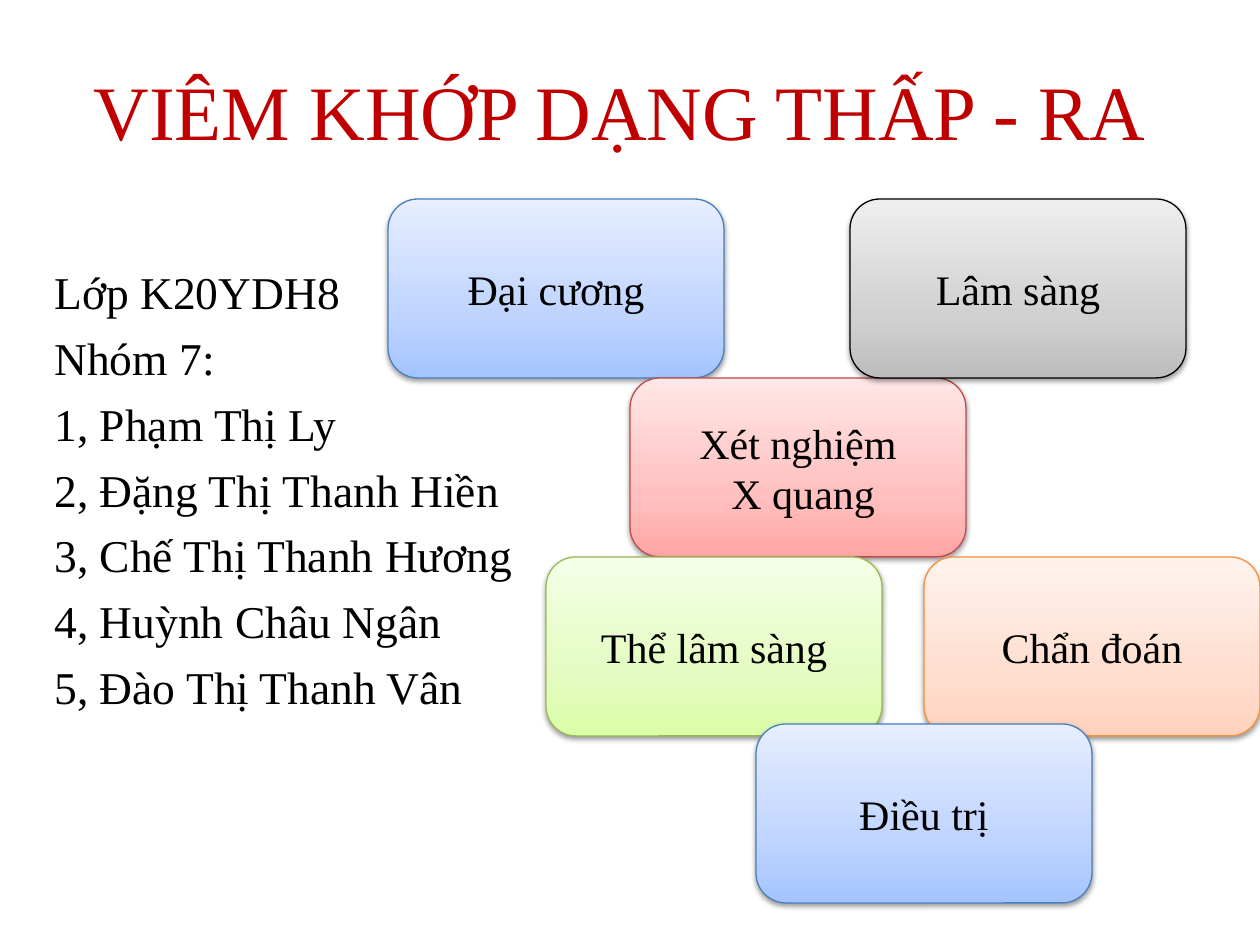
import pptx
import pptx.util
import pptx.dml.color
import pptx.enum.shapes
import pptx.enum.text
import pptx.oxml
import pptx.oxml.ns
import copy

RGBColor = pptx.dml.color.RGBColor
FONT = "Times New Roman"
BLACK = RGBColor(0x00, 0x00, 0x00)
TITLE_RED = RGBColor(0xC0, 0x00, 0x00)
STOP_POSITIONS = (0, 0.35, 1)

# Line colour, then the gradient from bottom to top
BLUE = (RGBColor(0x4B, 0x7E, 0xBC), RGBColor(0xA4, 0xC4, 0xFF),
        RGBColor(0xBF, 0xD4, 0xFF), RGBColor(0xE6, 0xEE, 0xFF))
RED = (RGBColor(0xBF, 0x4C, 0x48), RGBColor(0xFF, 0xA6, 0xA5),
       RGBColor(0xFF, 0xC0, 0xBF), RGBColor(0xFF, 0xE7, 0xE7))
ORANGE = (RGBColor(0xF6, 0x92, 0x40), RGBColor(0xFF, 0xD2, 0xBD),
          RGBColor(0xFF, 0xDE, 0xD0), RGBColor(0xFF, 0xF2, 0xED))
GREEN = (RGBColor(0x98, 0xB9, 0x55), RGBColor(0xDA, 0xFD, 0xA7),
         RGBColor(0xE4, 0xFC, 0xC2), RGBColor(0xF5, 0xFF, 0xE7))
GREY = (BLACK, RGBColor(0xBD, 0xBD, 0xBD),
        RGBColor(0xD1, 0xD1, 0xD1), RGBColor(0xEE, 0xEE, 0xEE))

CARD_WIDTH, CARD_HEIGHT = 336, 179
CARDS = [
    (388, 199, "Đại cương", BLUE),
    (630, 378, "Xét nghiệm\n X quang", RED),
    (924, 557, "Chẩn đoán", ORANGE),
    (546, 557, "Thể lâm sàng", GREEN),
    (850, 199, "Lâm sàng", GREY),
    (756, 724, "Điều trị", BLUE),
]
MEMBERS = [
    "Lớp K20YDH8",
    "Nhóm 7:",
    "1, Phạm Thị Ly",
    "2, Đặng Thị Thanh Hiền",
    "3, Chế Thị Thanh Hương",
    "4, Huỳnh Châu Ngân",
    "5, Đào Thị Thanh Vân",
]


def px(length):
    return round(length * pptx.util.Inches(1) / 126)


def write_text(box, text, size, color, align, anchor, gap=0):
    frame = box.text_frame
    frame.word_wrap = True
    frame.vertical_anchor = anchor
    frame.text = text
    for index, paragraph in enumerate(frame.paragraphs):
        paragraph.alignment = align
        if index and gap:
            paragraph.space_before = pptx.util.Pt(gap)
        for span in paragraph.runs:
            span.font.name = FONT
            span.font.size = pptx.util.Pt(size)
            span.font.color.rgb = color


def add_text(page, left, top, width, height, *style):
    box = page.shapes.add_textbox(px(left), px(top), px(width), px(height))
    write_text(box, *style)


def fill_gradient(shape, colors):
    shape.fill.gradient()
    shape.fill.gradient_angle = 90
    stop_list = shape._element.spPr.find(".//" + pptx.oxml.ns.qn("a:gsLst"))
    stop_list.append(copy.deepcopy(stop_list[-1]))
    for stop, position, color in zip(shape.fill.gradient_stops, STOP_POSITIONS, colors):
        stop.position = position
        stop.color.rgb = color


def add_shadow(shape):
    shape.shadow.inherit = False
    effects = shape._element.spPr.find(pptx.oxml.ns.qn("a:effectLst"))
    effects.append(pptx.oxml.parse_xml(
        f'<a:outerShdw {pptx.oxml.ns.nsdecls("a")} blurRad="40000" dist="20000" '
        'dir="5400000" rotWithShape="0"><a:srgbClr val="000000">'
        '<a:alpha val="38000"/></a:srgbClr></a:outerShdw>'))


def add_card(page, left, top, text, palette):
    line_color, *gradient = palette
    card = page.shapes.add_shape(
        pptx.enum.shapes.MSO_SHAPE.ROUNDED_RECTANGLE,
        px(left), px(top), px(CARD_WIDTH), px(CARD_HEIGHT))
    fill_gradient(card, gradient)
    card.line.color.rgb = line_color
    card.line.width = pptx.util.Pt(0.75)
    add_shadow(card)
    write_text(card, text, 24, BLACK, pptx.enum.text.PP_ALIGN.CENTER,
               pptx.enum.text.MSO_ANCHOR.MIDDLE)


def main():
    deck = pptx.Presentation()
    deck.slide_width, deck.slide_height = px(1260), px(945)
    page = deck.slides.add_slide(deck.slide_layouts[6])
    align, anchor = pptx.enum.text.PP_ALIGN, pptx.enum.text.MSO_ANCHOR
    add_text(page, 53, 0, 1134, 220, "VIÊM KHỚP DẠNG THẤP - RA",
             44, TITLE_RED, align.CENTER, anchor.MIDDLE)
    add_text(page, 42, 258, 567, 609, "\n".join(MEMBERS),
             26, BLACK, align.LEFT, anchor.TOP, 6.4)
    for card in CARDS:
        add_card(page, *card)
    deck.save("out.pptx")


if __name__ == "__main__":
    main()
